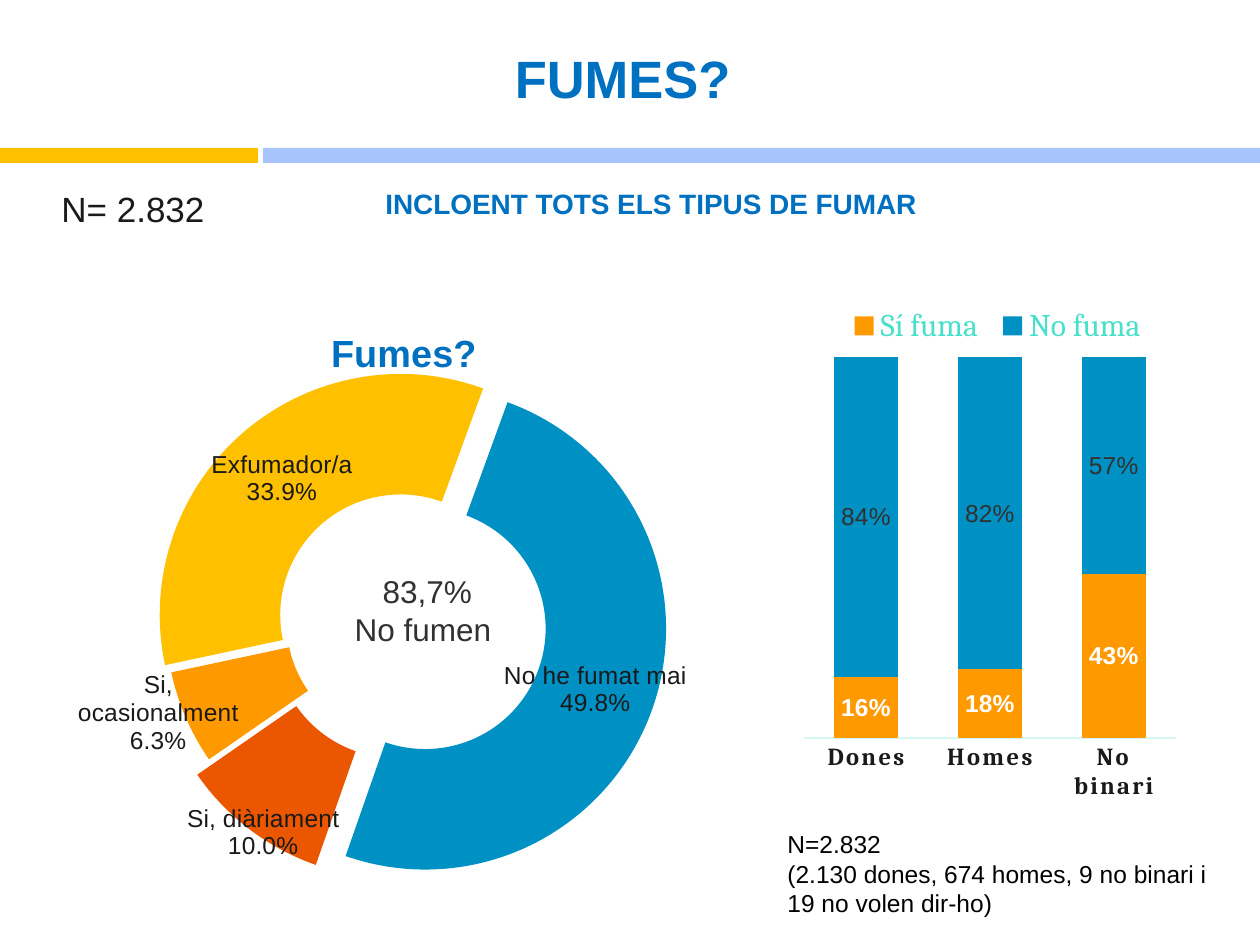
from lxml import etree
from pptx import Presentation
from pptx import util as u
from pptx.chart.data import CategoryChartData
from pptx.dml.color import RGBColor
from pptx.enum import chart as charts, shapes, text
from pptx.oxml import parse_xml
from pptx.oxml.ns import nsdecls, qn

EMU_PER_PX = 914400 / 126
COLORS = {
    "yellow": "FFC000", "pale_blue": "A8C4FC", "title_blue": "0070C0",
    "blue": "0091C4", "red": "EB5600", "orange": "FF9900",
    "ink": "1A1A1A", "grey": "313131", "black": "000000", "white": "FFFFFF",
    "mint": "47E0CB", "axis": "D5F8F3",
}


def px(*lengths):
    return [u.Emu(round(length * EMU_PER_PX)) for length in lengths]


def rgb(name):
    return RGBColor.from_string(COLORS[name])


def set_font(font, size, color, bold=False, name="Arial"):
    font.size = u.Pt(size)
    font.bold = bold
    font.name = name
    font.color.rgb = rgb(color)


def fill_solid(fill, color):
    fill.solid()
    fill.fore_color.rgb = rgb(color)


def add_bar(slide, box, color):
    shape = slide.shapes.add_shape(shapes.MSO_SHAPE.RECTANGLE, *px(*box))
    shape.shadow.inherit = False
    fill_solid(shape.fill, color)
    shape.line.fill.background()


def add_text(slide, box, lines, size, color, bold=False, centred=False, middle=False):
    frame = slide.shapes.add_textbox(*px(*box)).text_frame
    frame.word_wrap = True
    if middle:
        frame.vertical_anchor = text.MSO_ANCHOR.MIDDLE
    for index, line in enumerate(lines):
        paragraph = frame.paragraphs[0] if index == 0 else frame.add_paragraph()
        if centred:
            paragraph.alignment = text.PP_ALIGN.CENTER
        run = paragraph.add_run()
        run.text = line
        set_font(run.font, size, color, bold)


def manual_layout(inner=False, edge=True, **fractions):
    """Layout element; fractions (x, y, w, h) are shares of the chart size."""
    parts = ['<c:layoutTarget val="inner"/>'] if inner else []
    if edge:
        parts += ['<c:xMode val="edge"/>', '<c:yMode val="edge"/>']
    parts += [f'<c:{key} val="{value}"/>' for key, value in fractions.items()]
    return parse_xml(f'<c:layout {nsdecls("c")}><c:manualLayout>{"".join(parts)}'
                     '</c:manualLayout></c:layout>')


def set_layout(element, layout, after=None):
    """Replace the layout of a chart part, placing it after the named child."""
    for old in element.findall(qn("c:layout")):
        element.remove(old)
    previous = element.find(qn(after)) if after else None
    if previous is None:
        element.insert(0, layout)
    else:
        previous.addnext(layout)


def add_chart(slide, kind, box, categories, series, number_format):
    data = CategoryChartData(number_format=number_format)
    data.categories = categories
    for name, values in series:
        data.add_series(name, values)
    return slide.shapes.add_chart(kind, *px(*box), data).chart


def add_doughnut(slide):
    slices = [  # category, value, colour, explosion, label shift
        ("No he fumat mai", 49.8, "blue", 16, None),
        ("Si, diàriament", 10, "red", 16, (-0.03, 0.08)),
        ("Si, ocasionalment", 6.3, "orange", 0, (-0.11, 0.03)),
        ("Exfumador/a", 33.9, "yellow", 8, None),
    ]
    names, values, *_ = zip(*slices)
    chart = add_chart(slide, charts.XL_CHART_TYPE.DOUGHNUT, (23, 290, 753, 639),
                      names, [("Fumes?", values)], "General")
    chart.has_legend = False
    run = chart.chart_title.text_frame.paragraphs[0].add_run()
    run.text = "Fumes?"
    set_font(run.font, 21.6, "title_blue", True)
    set_layout(chart.chart_title._element, manual_layout(x=0.4, y=0.05), "c:tx")

    plot = chart.plots[0]
    plot.vary_by_categories = True
    set_layout(chart._chartSpace.chart.plotArea,
               manual_layout(True, x=0.19, y=0.14, w=0.64, h=0.76))
    ring = plot._element
    ring.find(qn("c:firstSliceAng")).set("val", "20")
    ring.find(qn("c:holeSize")).set("val", "50")

    series = plot.series[0]
    labels = series.data_labels
    set_font(labels.font, 14, "ink")
    labels.number_format = "0.0%"
    labels.number_format_is_linked = False
    labels.show_value = False
    labels.show_percentage = labels.show_category_name = True
    separator = etree.Element(qn("c:separator"))
    separator.text = "\n"
    labels._element.find(qn("c:showBubbleSize")).addnext(separator)

    for index, (_, _, color, explosion, shift) in enumerate(slices):
        point = series.points[index]
        fill_solid(point.format.fill, color)
        point_xml = series._element.findall(qn("c:dPt"))[index]
        exploded = etree.Element(qn("c:explosion"), val=str(explosion))
        point_xml.find(qn("c:spPr")).addprevious(exploded)
        if shift:
            label = parse_xml(
                f'<c:dLbl {nsdecls("c")}><c:idx val="{index}"/>'
                '<c:showLegendKey val="0"/><c:showVal val="0"/>'
                '<c:showCatName val="1"/><c:showSerName val="0"/>'
                '<c:showPercent val="1"/><c:showBubbleSize val="0"/>'
                '<c:separator>\n</c:separator></c:dLbl>')
            set_layout(label, manual_layout(edge=False, x=shift[0], y=shift[1]), "c:idx")
            labels._element.find(qn("c:numFmt")).addprevious(label)


def add_columns(slide):
    chart = add_chart(slide, charts.XL_CHART_TYPE.COLUMN_STACKED, (733, 248, 509, 557),
                      ["Dones", "Homes", "No binari"],
                      [("Sí fuma", (0.16, 0.18, 0.43)), ("No fuma", (0.84, 0.82, 0.57))],
                      "0%")
    chart.has_title = False
    chart.has_legend = True
    chart.legend.position = charts.XL_LEGEND_POSITION.TOP
    chart.legend.include_in_layout = False
    set_font(chart.legend.font, 18, "mint", name="Cambria")
    set_layout(chart.legend._element,
               manual_layout(x=0.21, y=0.1, w=0.62, h=0.08), "c:legendPos")
    set_layout(chart._chartSpace.chart.plotArea,
               manual_layout(True, x=0.14, y=0.06, w=0.73, h=0.82))

    value_axis = chart.value_axis
    value_axis.visible = value_axis.has_major_gridlines = False
    value_axis.minimum_scale, value_axis.maximum_scale = 0, 1.2
    axis = chart.category_axis
    axis.major_tick_mark = charts.XL_TICK_MARK.NONE
    axis.format.line.color.rgb = rgb("axis")
    axis.format.line.width = u.Pt(0.75)
    axis_font = axis.tick_labels.font
    set_font(axis_font, 14, "ink", True, "Cambria")
    axis_font._element.set("spc", "120")

    plot = chart.plots[0]
    plot.gap_width, plot.overlap = 95, 100
    styles = [("orange", "white", True), ("blue", "grey", False)]
    for series, (color, label_color, bold) in zip(plot.series, styles):
        fill_solid(series.format.fill, color)
        labels = series.data_labels
        labels.show_value = True
        labels.number_format = "0%"
        labels.number_format_is_linked = False
        set_font(labels.font, 14, label_color, bold)


def main():
    presentation = Presentation()
    presentation.slide_width, presentation.slide_height = px(1260, 945)
    slide = presentation.slides.add_slide(presentation.slide_layouts[6])
    add_bar(slide, (0, 148, 258, 15), "yellow")
    add_bar(slide, (263, 148, 997, 15), "pale_blue")
    add_doughnut(slide)
    add_text(slide, (0, 34, 1260, 88), ["FUMES? "], 30, "title_blue", True, True, True)
    add_columns(slide)
    add_text(slide, (49, 181, 190, 55), ["N= 2.832"], 20, "ink")
    add_text(slide, (340, 566, 166, 89), [" 83,7% No fumen"], 18, "grey", centred=True)
    add_text(slide, (775, 823, 447, 102),
             ["N=2.832", "(2.130 dones, 674 homes, 9 no binari i 19 no volen dir-ho)"],
             14, "black")
    add_text(slide, (373, 180, 619, 47), ["INCLOENT TOTS ELS TIPUS DE FUMAR"],
             16, "title_blue", True)
    presentation.save("out.pptx")


if __name__ == "__main__":
    main()
